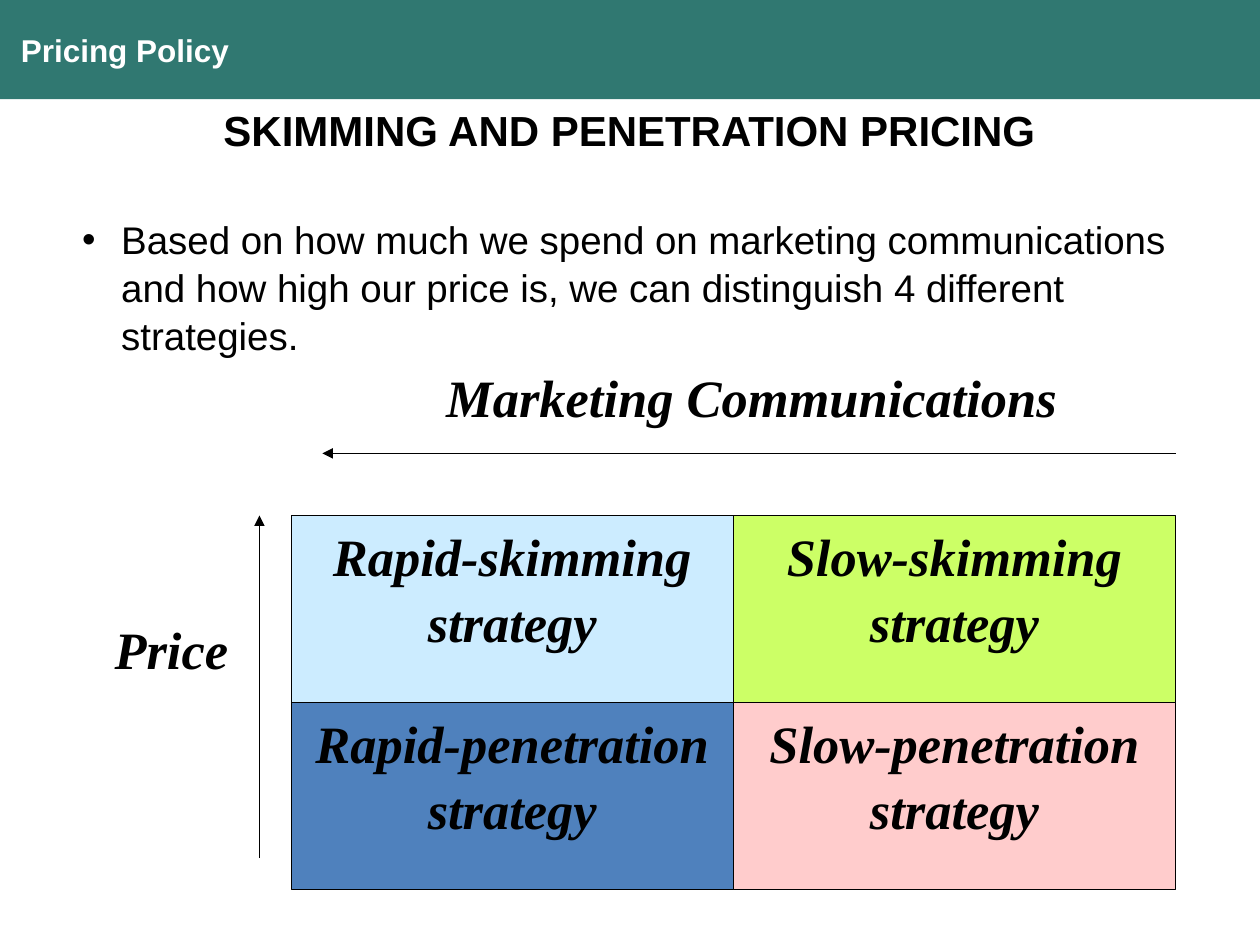
from pptx import Presentation, util as u
from pptx.dml.color import RGBColor
from pptx.enum import shapes, text
from pptx.oxml import parse_xml
from pptx.oxml.ns import nsdecls, qn

TEAL = RGBColor(0x30, 0x78, 0x71)
WHITE = RGBColor(0xFF, 0xFF, 0xFF)
BLACK = RGBColor(0, 0, 0)
SKY = RGBColor(0xCC, 0xEC, 0xFF)
LIME = RGBColor(0xCC, 0xFF, 0x66)
BLUE = RGBColor(0x4F, 0x81, 0xBD)
PINK = RGBColor(0xFF, 0xCC, 0xCC)

ALIGN = text.PP_ALIGN
ANCHOR = text.MSO_ANCHOR
SERIF = dict(font="Times New Roman", size=30, bold=True, italic=True)
GRID = [
    [("Rapid-skimming strategy", SKY), ("Slow-skimming strategy", LIME)],
    [("Rapid-penetration strategy", BLUE), ("Slow-penetration strategy", PINK)],
]


def write(shape, words, font="Arial", size=18, color=BLACK, bold=False,
          italic=False, align=ALIGN.LEFT, anchor=ANCHOR.TOP, space=1.0):
    frame = shape.text_frame
    frame.word_wrap = True
    frame.auto_size = text.MSO_AUTO_SIZE.NONE
    frame.vertical_anchor = anchor
    para = frame.paragraphs[0]
    para.alignment = align
    para.line_spacing = space
    para.space_before = u.Pt(0)
    run = para.add_run()
    run.text = words
    face = run.font
    face.name, face.size = font, u.Pt(size)
    face.bold, face.italic = bold, italic
    face.color.rgb = color
    return para


def place(shape, box):
    shape.left, shape.top, shape.width, shape.height = map(u.Cm, box)


def block(slide, box, fill, edge=None):
    shape = slide.shapes.add_shape(shapes.MSO_SHAPE.RECTANGLE, *map(u.Cm, box))
    shape.shadow.inherit = False
    shape.fill.solid()
    shape.fill.fore_color.rgb = fill
    if edge is None:
        shape.line.fill.background()
    else:
        shape.line.color.rgb = edge
        shape.line.width = u.Pt(0.75)
    return shape


def label(slide, box, words, **form):
    write(slide.shapes.add_textbox(*map(u.Cm, box)), words, **form)


def arrow(slide, *ends):
    """Draw a line from x, y to x, y with its head at the end."""
    line = slide.shapes.add_connector(
        shapes.MSO_CONNECTOR.STRAIGHT, *map(u.Cm, ends))
    line.line.color.rgb = BLACK
    line.line.width = u.Pt(0.75)
    line.line._get_or_add_ln().append(
        parse_xml(f'<a:tailEnd {nsdecls("a")} type="triangle"/>'))
    line._element.spPr.append(parse_xml(f'<a:effectLst {nsdecls("a")}/>'))


def banner(slide, box):
    bar = block(slide, box, TEAL)
    write(bar, "Pricing Policy", color=WHITE, bold=True, anchor=ANCHOR.MIDDLE)
    bar.text_frame.margin_left = u.Cm(0.42)


def title(slide, box):
    head = slide.shapes.title
    place(head, box)
    write(head, "SKIMMING AND PENETRATION PRICING", size=24, bold=True,
          align=ALIGN.CENTER)


def body(slide, box):
    hold = slide.placeholders[1]
    place(hold, box)
    para = write(
        hold, "Based on how much we spend on marketing communications and how "
        "high our price is, we can distinguish 4 different strategies.",
        size=22, space=1.04)
    props = para._p.get_or_add_pPr()
    dent = u.Cm(0.79)
    props.set("marL", str(dent))
    props.set("indent", str(-dent))
    mark = props.makeelement(qn("a:buChar"), {"char": "•"})
    props.append(mark)


def matrix(slide, box):
    """Draw the two axes and the grid of strategies."""
    left, top, width, height = box
    x, y = left + 3.81, top + 3.2
    wide, high = (left + width - x) / 2, (top + height - y) / 2
    for row, line in enumerate(GRID):
        for col, (words, fill) in enumerate(line):
            cell = block(slide, (x + col * wide, y + row * high, wide, high),
                         fill, BLACK)
            write(cell, words, align=ALIGN.CENTER, space=1.04, **SERIF)
    label(slide, (left + 6.4, top, 13.39, 1.24), "Marketing Communications",
          align=ALIGN.CENTER, space=1.04, **SERIF)
    arrow(slide, left + width, top + 1.95, left + 4.44, top + 1.95)
    label(slide, (left, top + 5.08, 3.18, 2.51), "Price", space=1.04, **SERIF)
    arrow(slide, left + 3.17, top + 10.11, left + 3.17, y)


def main():
    deck = Presentation()
    deck.slide_width, deck.slide_height = u.Cm(25.4), u.Cm(19.05)
    slide = deck.slides.add_slide(deck.slide_layouts[1])
    banner(slide, (0, 0, 25.4, 2))
    title(slide, (0.94, 1.98, 23.5, 1.27))
    body(slide, (1.4, 4.19, 23.55, 4.95))
    matrix(slide, (2.06, 7.19, 21.64, 10.74))
    deck.save("out.pptx")


if __name__ == "__main__":
    main()
